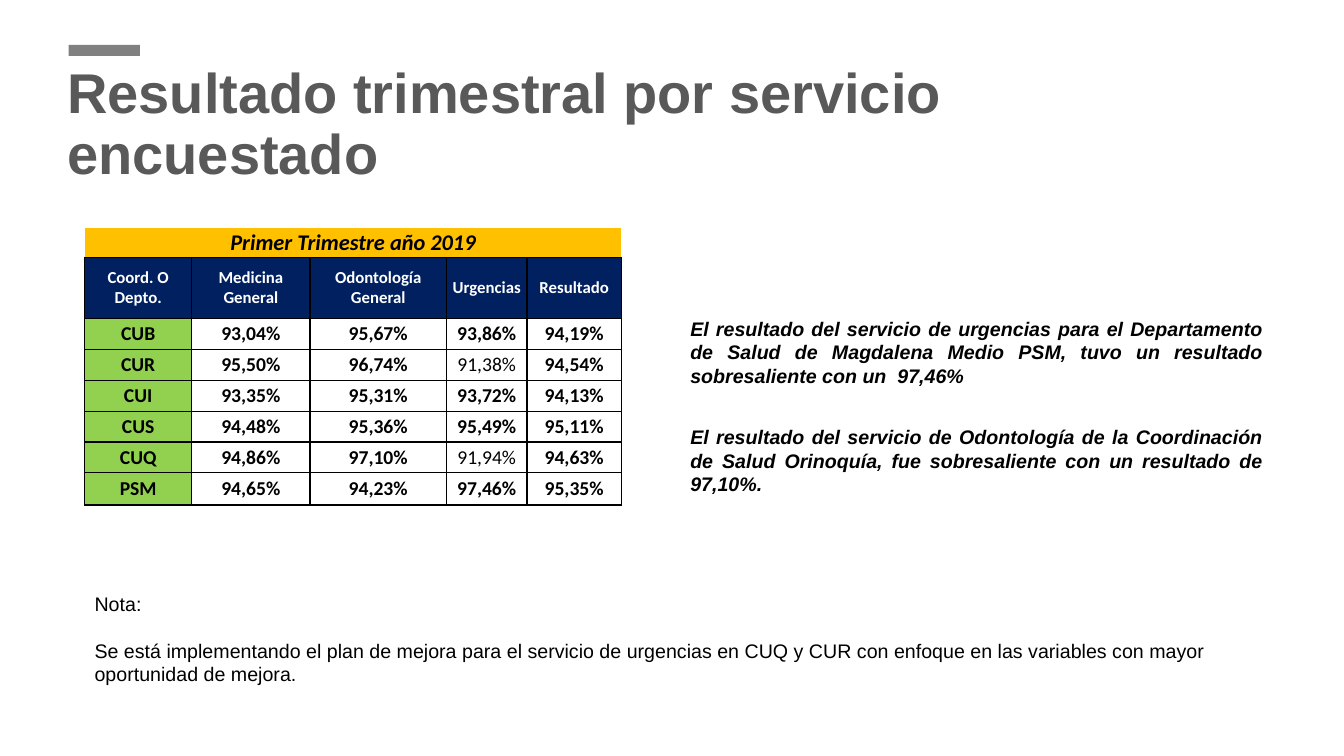
from dataclasses import dataclass

from lxml import etree
from pptx import Presentation
from pptx import util as u
from pptx.dml.color import RGBColor
from pptx.enum import shapes, text
from pptx.oxml import ns

BLACK = RGBColor(0x00, 0x00, 0x00)
WHITE = RGBColor(0xFF, 0xFF, 0xFF)
GREY = RGBColor(0x80, 0x80, 0x80)
SLATE = RGBColor(0x59, 0x59, 0x59)
GOLD = RGBColor(0xFF, 0xC0, 0x00)
NAVY = RGBColor(0x00, 0x20, 0x60)
GREEN = RGBColor(0x92, 0xD0, 0x50)

LINE = 16.8  # one line of 14 pt text
SIDES = "LRTB"
ALIGN = text.PP_ALIGN
ANCHOR = text.MSO_ANCHOR


@dataclass(frozen=True)
class Box:
    left: float
    top: float
    width: float
    height: float

    def place(self) -> tuple:
        return tuple(u.Pt(v) for v in (self.left, self.top, self.width, self.height))


@dataclass(frozen=True)
class Note:
    box: Box
    lines: tuple[str, ...]
    style: dict


@dataclass(frozen=True)
class Look:
    fill: RGBColor
    size: float
    color: RGBColor = BLACK
    italic: bool = False
    edges: str = SIDES


TITLE = Look(GOLD, 16, italic=True, edges="B")
HEAD = Look(NAVY, 12, WHITE)
UNIT = Look(GREEN, 14)
VALUE = Look(WHITE, 14)

COLS = (76.5, 84.5, 97.5, 57.5, 67.5)
ROWS = (21, 44, 22, 22, 22, 22, 22, 23)
GRID = (
    ("Primer Trimestre año 2019", "", "", "", ""),
    ("Coord. O Depto.", "Medicina General", "Odontología General", "Urgencias", "Resultado"),
    ("CUB", "93,04%", "95,67%", "93,86%", "94,19%"),
    ("CUR", "95,50%", "96,74%", "91,38%", "94,54%"),
    ("CUI", "93,35%", "95,31%", "93,72%", "94,13%"),
    ("CUS", "94,48%", "95,36%", "95,49%", "95,11%"),
    ("CUQ", "94,86%", "97,10%", "91,94%", "94,63%"),
    ("PSM", "94,65%", "94,23%", "97,46%", "95,35%"),
)
LIGHT = {"91,38%", "91,94%"}  # the only values not in bold

CLAIM = dict(bold=True, italic=True, align=ALIGN.JUSTIFY)
NOTES = (
    Note(Box(41, 37.5, 804, 104.5), ("Resultado trimestral por servicio encuestado",),
         dict(size=40, color=SLATE, bold=True, space=0.9, anchor=ANCHOR.MIDDLE)),
    Note(Box(486, 222.75, 423.5, 58),
         ("El resultado del servicio de urgencias para el Departamento de Salud de "
          "Magdalena Medio PSM, tuvo un resultado sobresaliente con un  97,46%",), CLAIM),
    Note(Box(486, 300, 423.5, 58),
         ("El resultado del servicio de Odontología de la Coordinación de Salud "
          "Orinoquía, fue sobresaliente con un resultado de 97,10%.",), CLAIM),
    Note(Box(60.5, 419, 820, 75),
         ("Nota:",
          "Se está implementando el plan de mejora para el servicio de urgencias en CUQ "
          "y CUR con enfoque en las variables con mayor oportunidad de mejora."),
         dict(gap=LINE)),
)


def write(frame, *lines: str, size: float = 14, font: str = "Arial",
          color: RGBColor = BLACK, bold: bool = False, italic: bool = False,
          align=ALIGN.LEFT, anchor=ANCHOR.TOP, space: float = 1.0, gap: float = 0) -> None:
    """Fill a text frame with one paragraph per line, gap points apart."""
    frame.word_wrap = True
    frame.vertical_anchor = anchor
    for i, line in enumerate(lines):
        para = frame.add_paragraph() if i else frame.paragraphs[0]
        para.alignment = align
        para.line_spacing = space
        if i:
            para.space_before = u.Pt(gap)
        run = para.add_run()
        run.text = line
        face = run.font
        face.name, face.size = font, u.Pt(size)
        face.bold, face.italic = bold, italic
        face.color.rgb = color


def edge(cell, sides: str) -> None:
    """Draw thin black borders on the given sides and none on the rest."""
    props = cell._tc.get_or_add_tcPr()
    for side in SIDES:
        line = etree.SubElement(props, ns.qn(f"a:ln{side}"), w=str(u.Pt(1)))
        if side in sides:
            fill = etree.SubElement(line, ns.qn("a:solidFill"))
            etree.SubElement(fill, ns.qn("a:srgbClr"), val=str(BLACK))
        else:
            etree.SubElement(line, ns.qn("a:noFill"))


def pick(row: int, col: int) -> Look:
    if row < 2:
        return (TITLE, HEAD)[row]
    return VALUE if col else UNIT


def draw_grid(slide) -> None:
    box = Box(60.5, 162.75, sum(COLS), sum(ROWS))
    table = slide.shapes.add_table(len(ROWS), len(COLS), *box.place()).table
    table.first_row = table.horz_banding = False
    for col, width in zip(table.columns, COLS):
        col.width = u.Pt(width)
    for row, height in zip(table.rows, ROWS):
        row.height = u.Pt(height)
    table.cell(0, 0).merge(table.cell(0, len(COLS) - 1))
    for r, words in enumerate(GRID):
        for c, word in enumerate(words):
            cell, look = table.cell(r, c), pick(r, c)
            cell.margin_left = cell.margin_right = 0
            cell.margin_top = cell.margin_bottom = 0
            edge(cell, look.edges)
            cell.fill.solid()
            cell.fill.fore_color.rgb = look.fill
            cell.vertical_anchor = ANCHOR.MIDDLE
            if word:
                write(cell.text_frame, word, size=look.size, font="Calibri",
                      color=look.color, bold=word not in LIGHT, italic=look.italic,
                      align=ALIGN.CENTER, anchor=ANCHOR.MIDDLE)


def draw_bar(slide) -> None:
    box = Box(49, 32, 51, 8)
    bar = slide.shapes.add_shape(shapes.MSO_SHAPE.RECTANGLE, *box.place())
    bar.shadow.inherit = False
    bar.fill.solid()
    bar.fill.fore_color.rgb = GREY
    bar.line.fill.background()


def main() -> None:
    deck = Presentation()
    deck.slide_width, deck.slide_height = u.Pt(960), u.Pt(540)
    slide = deck.slides.add_slide(deck.slide_layouts[6])
    draw_bar(slide)
    for note in NOTES:
        frame = slide.shapes.add_textbox(*note.box.place()).text_frame
        write(frame, *note.lines, **note.style)
    draw_grid(slide)
    deck.save("out.pptx")


if __name__ == "__main__":
    main()
